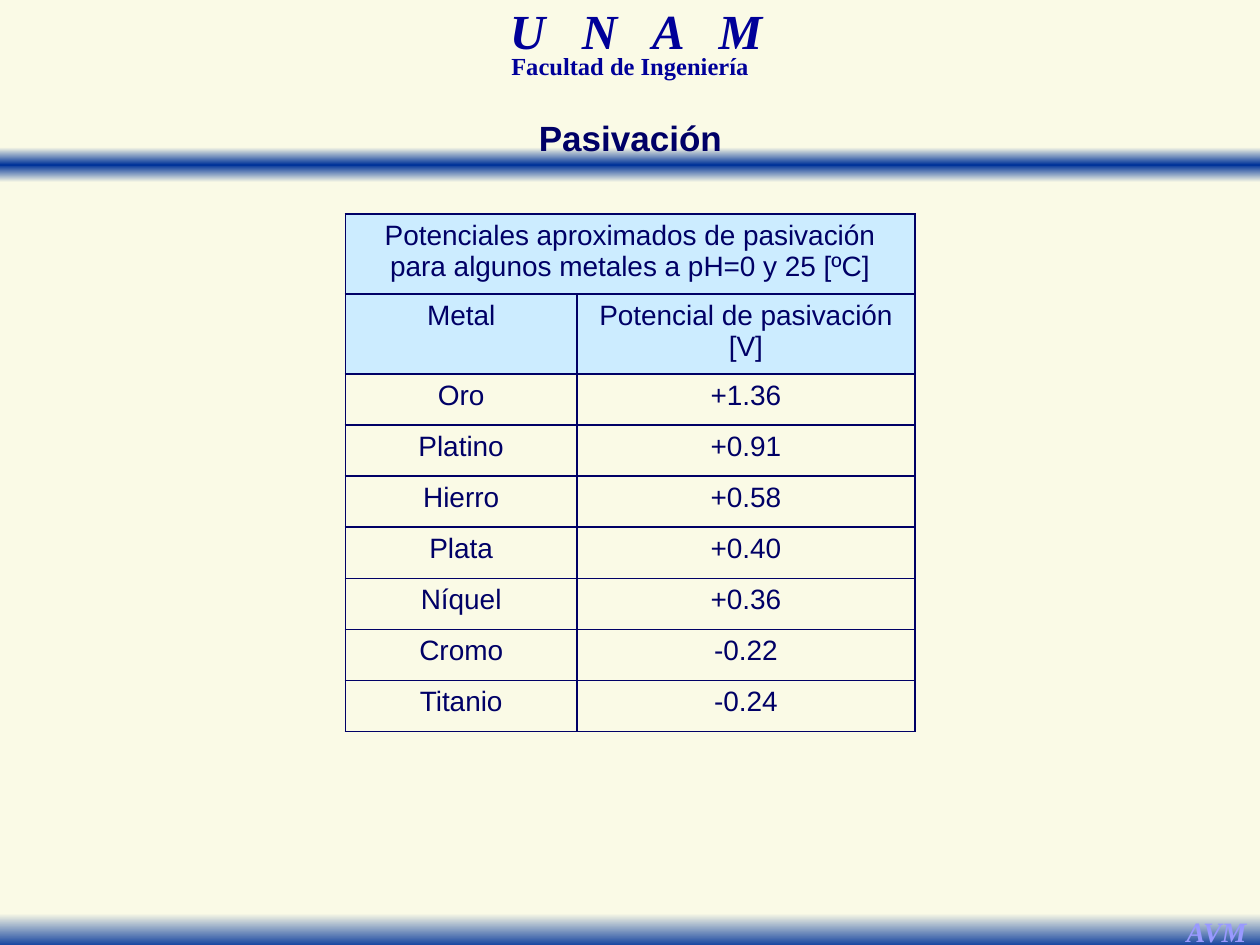
from copy import deepcopy
from typing import Any, NamedTuple

from lxml.etree import SubElement as Sub
from pptx import Presentation
from pptx.dml.color import RGBColor as Rgb
from pptx.enum.shapes import MSO_SHAPE as Shape
from pptx.enum.text import MSO_AUTO_SIZE as Fit, PP_ALIGN as Align
from pptx.oxml.ns import qn
from pptx.util import Pt

CREAM, BLUE, NAVY, INK, ICE = "FAFAE6", "003399", "000099", "000066", "CCECFF"
SERIF, SANS = "Times New Roman", "Arial"


class Band(NamedTuple):
    top: float
    stops: list[tuple[float, str]]


class Label(NamedTuple):
    text: str
    left: float
    top: float
    width: float
    height: float
    font: dict[str, Any]
    color: str
    lead: float = 1.0
    wrap: bool = True
    track: int = 0


class Row(NamedTuple):
    cells: list[str]
    high: float = 29.22
    fill: str = ""


BANDS = [
    Band(84.2, [(0, CREAM), (0.5, BLUE), (1, CREAM)]),
    Band(522, [(0, CREAM), (1, BLUE)]),
]
BOLD = {"name": SERIF, "bold": True, "italic": False}
SLANT = BOLD | {"italic": True}
LABELS = [
    Label("U N A M", 222.4, 5.8, 282.2, 31, SLANT | {"size": Pt(28)}, NAVY, 0.7, track=700),
    Label("Facultad de Ingeniería", 231.1, 30.2, 257.8, 18.7,
          BOLD | {"size": Pt(14)}, NAVY, 0.7),
    Label("AVM", 670.3, 519.1, 49.7, 26.6, SLANT | {"size": Pt(16)}, "9999FF", wrap=False),
    Label("Pasivación", 300.2, 53.3, 120.2, 37.4,
          BOLD | {"name": SANS, "size": Pt(20)}, INK, 1.4, False),
]
DATA = [
    ("Oro", "+1.36"), ("Platino", "+0.91"), ("Hierro", "+0.58"), ("Plata", "+0.40"),
    ("Níquel", "+0.36"), ("Cromo", "-0.22"), ("Titanio", "-0.24"),
]
ROWS = [
    Row(["Potenciales aproximados de pasivación\npara algunos metales a pH=0 y 25 [ºC]", ""],
        45.65, ICE),
    Row(["Metal", "Potencial de pasivación [V]"], 45.65, ICE),
    *(Row(list(pair)) for pair in DATA),
]
COLS = [132.5, 193]
CELL = {"name": SANS, "size": Pt(16)}


def hue(code: str) -> Rgb:
    return Rgb.from_string(code)


def style(font: Any, values: dict[str, Any], color: str) -> None:
    for key, value in values.items():
        setattr(font, key, value)
    font.color.rgb = hue(color)


def draw_band(slide: Any, band: Band) -> None:
    bar = slide.shapes.add_shape(Shape.RECTANGLE, 0, Pt(band.top), Pt(720), Pt(20))
    bar.shadow.inherit = False
    bar.line.fill.background()
    bar.fill.gradient()
    bar.fill.gradient_angle = 270
    stops = bar._element.spPr.find(".//" + qn("a:gsLst"))
    while len(stops) < len(band.stops):
        stops.append(deepcopy(stops[0]))
    for stop, (place, code) in zip(bar.fill.gradient_stops, band.stops):
        stop.position = place
        stop.color.rgb = hue(code)


def draw_label(slide: Any, label: Label) -> None:
    box = slide.shapes.add_textbox(*map(Pt, label[1:5]))
    frame = box.text_frame
    frame.word_wrap = label.wrap
    frame.auto_size = Fit.SHAPE_TO_FIT_TEXT
    line = frame.paragraphs[0]
    line.alignment = Align.CENTER
    line.line_spacing = label.lead
    run = line.add_run()
    run.text = label.text
    style(run.font, label.font, label.color)
    if label.track:
        run._r.get_or_add_rPr().set("spc", str(label.track))


def rule_cell(cell: Any) -> None:
    props = cell._tc.get_or_add_tcPr()
    for side in "LRTB":
        edge = Sub(props, qn(f"a:ln{side}"), w=str(Pt(1)))
        Sub(Sub(edge, qn("a:solidFill")), qn("a:srgbClr"), val=INK)


def fill_cell(cell: Any, text: str, fill: str) -> None:
    rule_cell(cell)
    if fill:
        cell.fill.solid()
        cell.fill.fore_color.rgb = hue(fill)
    else:
        cell.fill.background()
    cell.text = text
    for line in cell.text_frame.paragraphs:
        line.alignment = Align.CENTER
        style(line.font, CELL, INK)
        for run in line.runs:
            style(run.font, CELL, INK)


def draw_table(slide: Any, rows: list[Row]) -> None:
    high = sum(row.high for row in rows)
    frame = slide.shapes.add_table(
        len(rows), len(COLS), Pt(197.3), Pt(122.4), Pt(sum(COLS)), Pt(high))
    table = frame.table
    table.first_row = table.horz_banding = False
    for col, width in zip(table.columns, COLS):
        col.width = Pt(width)
    for line, row in zip(table.rows, rows):
        line.height = Pt(row.high)
        for cell, text in zip(line.cells, row.cells):
            fill_cell(cell, text, row.fill)
    table.cell(0, 0).merge(table.cell(0, 1))


def main() -> None:
    deck = Presentation()
    deck.slide_width, deck.slide_height = Pt(720), Pt(540)
    slide = deck.slides.add_slide(deck.slide_layouts[6])
    slide.background.fill.solid()
    slide.background.fill.fore_color.rgb = hue(CREAM)
    for band in BANDS:
        draw_band(slide, band)
    for label in LABELS:
        draw_label(slide, label)
    draw_table(slide, ROWS)
    deck.save("out.pptx")


if __name__ == "__main__":
    main()
